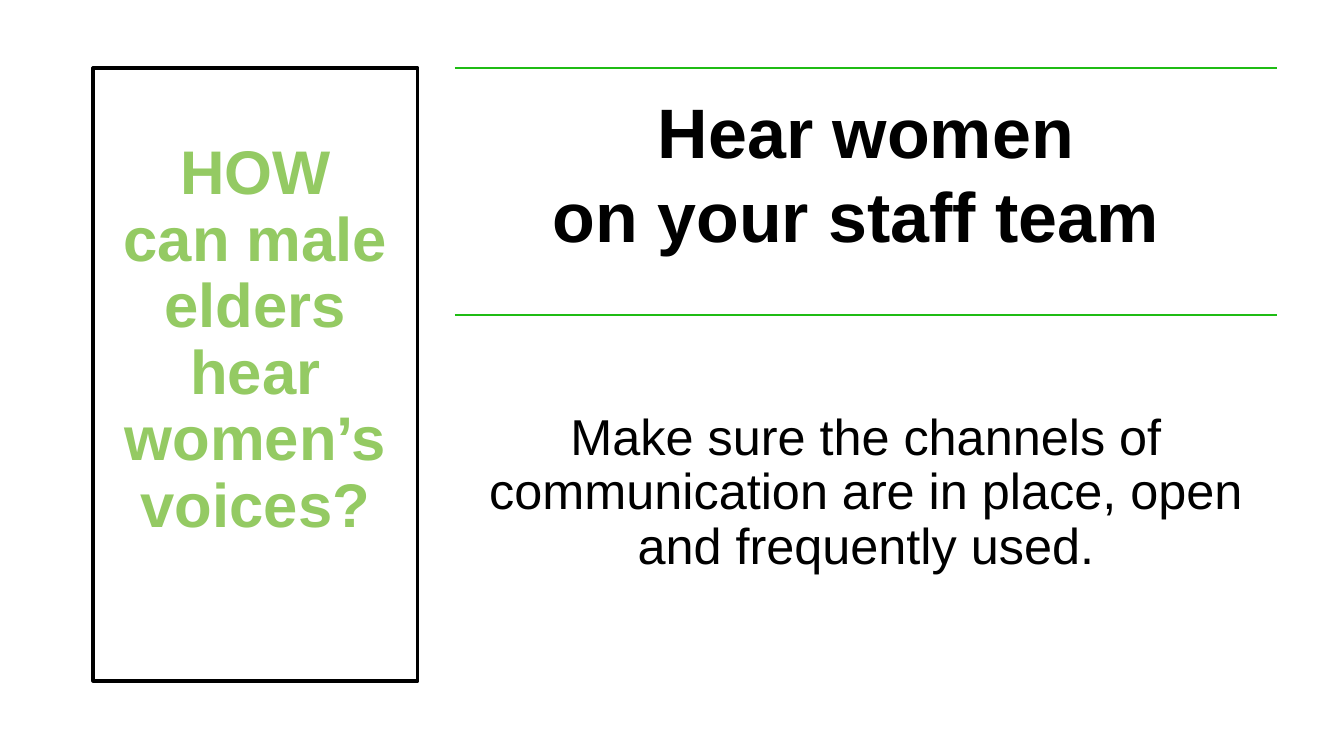
from pptx import Presentation
from pptx.dml.color import RGBColor
from pptx.enum.shapes import MSO_CONNECTOR
from pptx.enum.text import MSO_ANCHOR, MSO_AUTO_SIZE, PP_ALIGN
from pptx.util import Emu, Pt
from pptx.oxml.ns import qn
from lxml.etree import SubElement

# Content: lines, box, insets (left, top, right, bottom), size, bold, colour, spacing
TITLE = (["HOW\vcan male elders hear women’s voices?"],
         (93, 68, 325, 613), (10, 5, 10, 72), 44, True, "94CA63", 0.9)
TEXTS = [
    (["Hear women", "on your staff team "],
     (455, 68, 822, 306), (21, 21, 21, 21), 50, True, "000000", 1.0),
    (["Make sure the channels of communication are in place, open and frequently used."],
     (455, 345, 822, 306), (10, 67, 10, 10), 36, False, "000000", 0.9),
]
RULES = [68, 315]
LEFT, RIGHT = 455, 1277
GREEN, BLACK = "1FBC14", "000000"


def px(n):
    return Emu(round(n * 914400 / 100.8))


def rgb(code):
    return RGBColor.from_string(code)


def write(shape, lines, inset, size, bold, color, gap, anchor):
    frame = shape.text_frame
    frame.text = "\n".join(lines)
    frame.word_wrap = True
    frame.auto_size = MSO_AUTO_SIZE.NONE
    frame.vertical_anchor = anchor
    (frame.margin_left, frame.margin_top,
     frame.margin_right, frame.margin_bottom) = map(px, inset)
    for para in frame.paragraphs:
        para.alignment = PP_ALIGN.CENTER
        para.line_spacing = gap
        para.space_before = Pt(0)
        font = para.font
        font.name, font.size, font.bold = "Arial", Pt(size), bold
        font.color.rgb = rgb(color)


deck = Presentation()
deck.slide_width, deck.slide_height = px(1344), px(756)
slide = deck.slides.add_slide(deck.slide_layouts[5])
shapes = slide.shapes

# Framed question
lines, box, *style = TITLE
title = shapes.title
title.left, title.top, title.width, title.height = map(px, box)
title.fill.background()
title.line.color.rgb = rgb(BLACK)
title.line.width = Pt(2.25)
write(title, lines, *style, MSO_ANCHOR.MIDDLE)

# Green rules
for y in RULES:
    rule = shapes.add_connector(MSO_CONNECTOR.STRAIGHT,
                                px(LEFT), px(y), px(RIGHT), px(y))
    rule.line.color.rgb = rgb(GREEN)
    rule.line.width = Pt(1)
    SubElement(rule._element.spPr, qn("a:effectLst"))

# Answer and detail
for lines, box, *style in TEXTS:
    write(shapes.add_textbox(*map(px, box)), lines, *style, MSO_ANCHOR.TOP)

deck.save("out.pptx")
